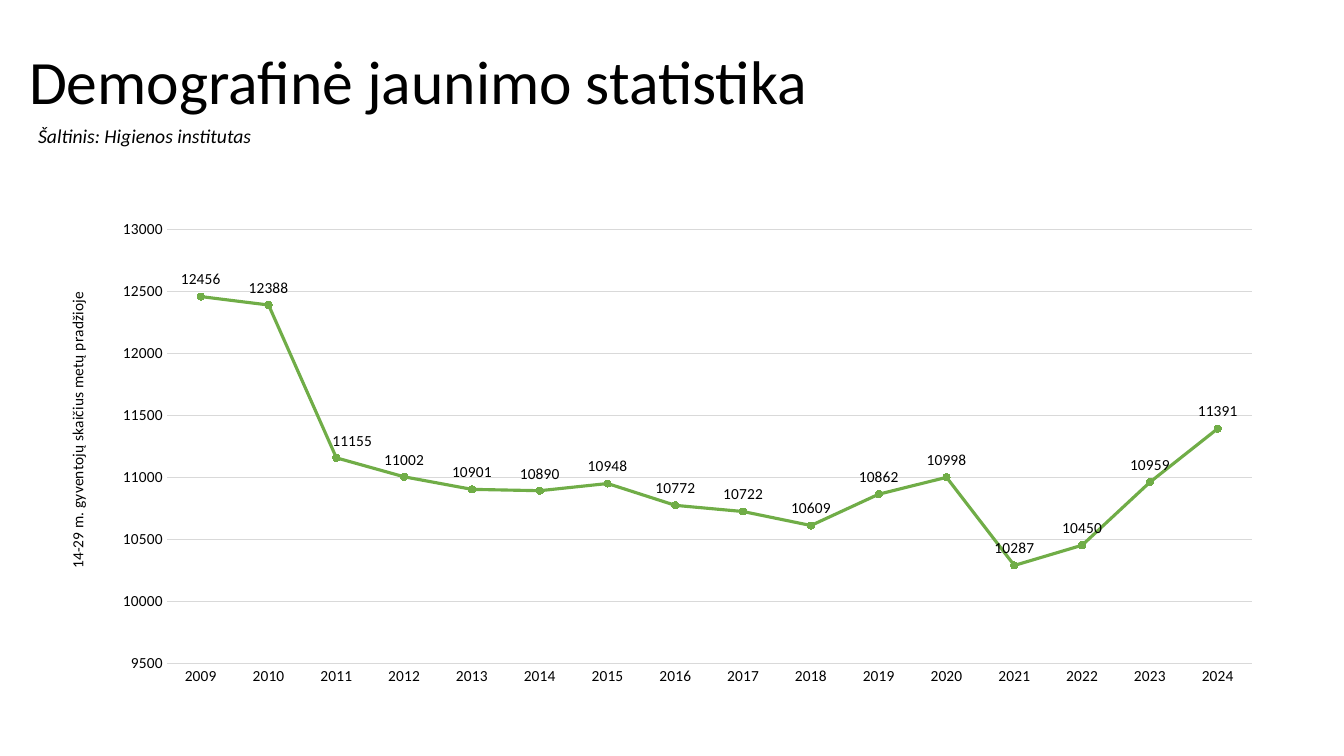
from dataclasses import dataclass

from lxml import etree
from pptx import Presentation
from pptx.chart.data import CategoryChartData
from pptx.dml.color import RGBColor
from pptx.enum import chart as ch, text as tx
from pptx.oxml import ns
from pptx.util import Pt

SCALE = 9144  # EMU per px, 100 px to the inch


@dataclass(frozen=True)
class Theme:
    face: str = "Calibri"
    ink: str = "000000"
    grid: str = "D9D9D9"
    green: str = "70AD47"
    title: int = 44
    source: int = 14
    label: int = 11
    thin: float = 0.75
    thick: float = 2.25


THEME = Theme()
YEARS = range(2009, 2025)
YOUTH = (12456, 12388, 11155, 11002, 10901, 10890, 10948, 10772,
         10722, 10609, 10862, 10998, 10287, 10450, 10959, 11391)


def px(*nums):
    return [n * SCALE for n in nums]


def rgb(code):
    return RGBColor.from_string(code)


def style(font, size, italic=False):
    font.name = THEME.face
    font.size = Pt(size)
    font.bold = False
    font.italic = italic
    font.color.rgb = rgb(THEME.ink)


def stroke(line, color, width):
    line.color.rgb = rgb(color)
    line.width = Pt(width)


def add_text(slide, words, box, size, italic=False, space=1.0):
    frame = slide.shapes.add_textbox(*px(*box)).text_frame
    frame.word_wrap = True
    frame.vertical_anchor = tx.MSO_ANCHOR.MIDDLE
    para = frame.paragraphs[0]
    para.line_spacing = space
    run = para.add_run()
    run.text = words
    style(run.font, size, italic)


def place(layout, **spots):
    """Give a chart layout element its manual position, as chart fractions."""
    manual = etree.SubElement(layout, ns.qn("c:manualLayout"))
    for tag, val in spots.items():
        etree.SubElement(manual, ns.qn(f"c:{tag}")).set("val", str(val))


def set_years(axis):
    axis.major_tick_mark = ch.XL_TICK_MARK.NONE
    style(axis.tick_labels.font, THEME.label)
    stroke(axis.format.line, THEME.grid, THEME.thin)


def set_scale(axis, name):
    axis.minimum_scale, axis.maximum_scale = 9500, 13000
    axis.major_unit = 500
    axis.major_tick_mark = ch.XL_TICK_MARK.NONE
    style(axis.tick_labels.font, THEME.label)
    axis.format.line.fill.background()
    stroke(axis.major_gridlines.format.line, THEME.grid, THEME.thin)

    frame = axis.axis_title.text_frame
    run = frame.paragraphs[0].add_run()
    run.text = name
    style(run.font, THEME.label)
    title = axis.axis_title._element
    body = title.find(".//" + ns.qn("a:bodyPr"))
    body.set("rot", "-5400000")
    body.set("vert", "horz")
    place(title.find(ns.qn("c:layout")),
          xMode="edge", yMode="edge", x=0.017, y=0.148)


def set_line(series):
    series.smooth = False
    stroke(series.format.line, THEME.green, THEME.thick)
    mark = series.marker
    mark.style = ch.XL_MARKER_STYLE.CIRCLE
    mark.size = 5
    mark.format.fill.solid()
    mark.format.fill.fore_color.rgb = rgb(THEME.green)
    stroke(mark.format.line, THEME.green, THEME.thin)

    tags = series.data_labels
    tags.show_value = True
    shift = series.points[2].data_label
    for tag in (tags, shift):
        tag.position = ch.XL_LABEL_POSITION.ABOVE
        style(tag.font, THEME.label)
    # The 2011 label moves right, clear of the falling line
    layout = etree.Element(ns.qn("c:layout"))
    place(layout, x=0.013, y=0)
    series._element.find(".//" + ns.qn("c:dLbl")).insert(1, layout)


def add_graph(slide, box):
    data = CategoryChartData()
    data.categories = [str(year) for year in YEARS]
    data.add_series("Series 1", YOUTH)
    chart = slide.shapes.add_chart(
        ch.XL_CHART_TYPE.LINE_MARKERS, *px(*box), data).chart
    chart.has_legend = False
    chart.has_title = False
    style(chart.font, THEME.label)
    set_years(chart.category_axis)
    set_scale(chart.value_axis, "14-29 m. gyventojų skaičius metų pradžioje")

    plot = chart.plots[0]
    plot.vary_by_categories = False
    set_line(plot.series[0])
    area = chart._chartSpace.find(".//" + ns.qn("c:plotArea"))
    layout = area.find(ns.qn("c:layout"))
    if layout is None:
        layout = etree.Element(ns.qn("c:layout"))
        area.insert(0, layout)
    place(layout, layoutTarget="inner", xMode="edge", yMode="edge",
          x=0.101, y=0.02, w=0.887, h=0.926)


def main():
    deck = Presentation()
    deck.slide_width, deck.slide_height = px(1333, 750)
    slide = deck.slides.add_slide(deck.slide_layouts[6])
    add_text(slide, "Demografinė jaunimo statistika", (19, 32, 1150, 103),
             THEME.title, space=0.9)
    add_graph(slide, (43, 218, 1213, 465))
    add_text(slide, "Šaltinis: Higienos institutas", (28, 110, 1064, 50),
             THEME.source, italic=True)
    deck.save("out.pptx")


if __name__ == "__main__":
    main()
